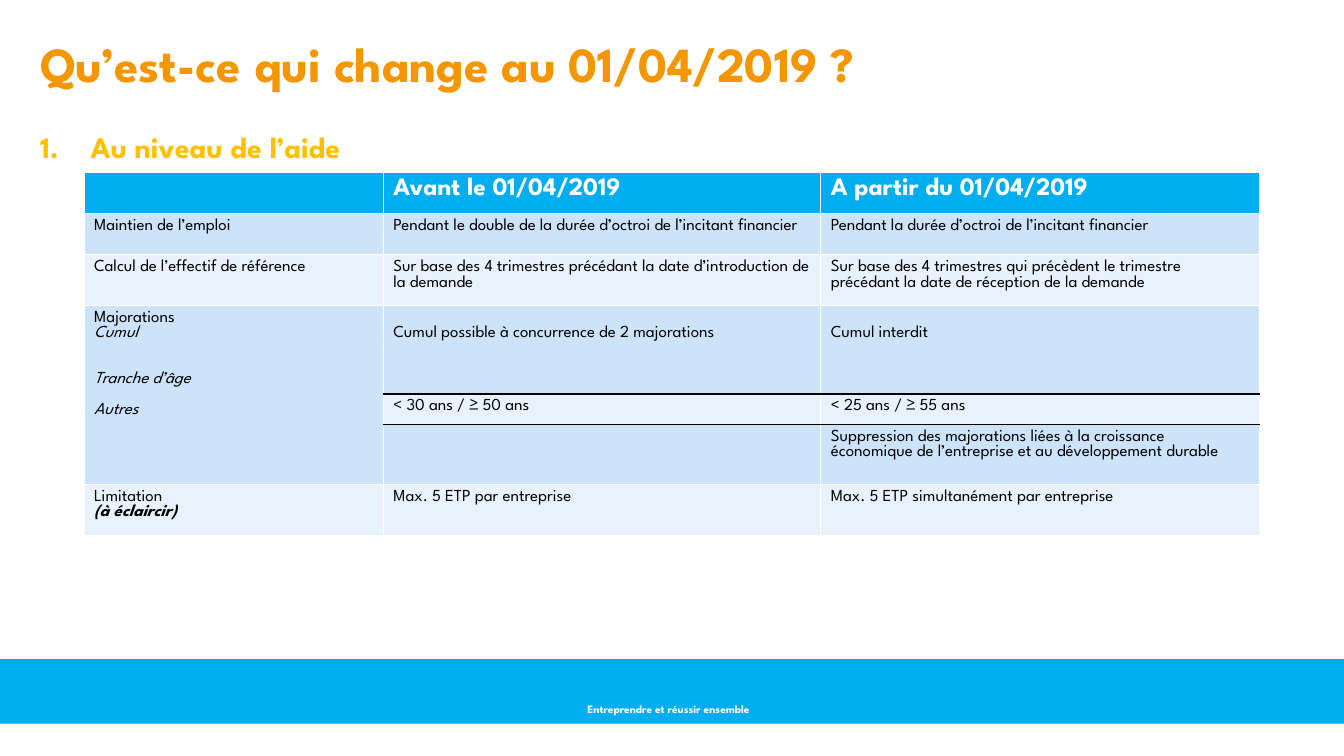
from lxml import etree
from pptx import Presentation
from pptx.dml.color import RGBColor
from pptx.enum.shapes import MSO_SHAPE
from pptx.enum.text import MSO_ANCHOR, PP_ALIGN
from pptx.oxml.ns import qn
from pptx.util import Pt

RECTANGLE = MSO_SHAPE.RECTANGLE
MIDDLE = MSO_ANCHOR.MIDDLE
CENTER = PP_ALIGN.CENTER

FONT = "League Spartan"
BLUE = RGBColor(0x00, 0xAE, 0xEF)
ORANGE = RGBColor(0xF3, 0x96, 0x00)
YELLOW = RGBColor(0xFF, 0xC0, 0x00)
BAND_DARK = RGBColor(0xCC, 0xE3, 0xF9)
BAND_LIGHT = RGBColor(0xE7, 0xF2, 0xFC)
WHITE = RGBColor(0xFF, 0xFF, 0xFF)
BLACK = RGBColor(0x00, 0x00, 0x00)

LINE_HEIGHT = 11  # one line of 12 pt table text
COLUMN_WIDTHS = (213.8, 312.5, 313.2)
ROW_HEIGHTS = (29.2, 29.5, 29.5, 63.4, 20.2, 43.2, 29.5)
AGE_ROW = 4

# Each paragraph is (text, bold, italic, blank lines above)
CHANGES = [
    ["", "Avant le 01/04/2019", "A partir du 01/04/2019"],
    ["Maintien de l’emploi",
     "Pendant le double de la durée d’octroi de l’incitant financier",
     "Pendant la durée d’octroi de l’incitant financier"],
    ["Calcul de l’effectif de référence",
     "Sur base des 4 trimestres précédant la date d’introduction de la demande",
     "Sur base des 4 trimestres qui précèdent le trimestre précédant "
     "la date de réception de la demande"],
    [[("Majorations", False, False, 0), ("Cumul", False, True, 0),
      ("Tranche d’âge", False, True, 2), ("Autres", False, True, 1)],
     "Cumul possible à concurrence de 2 majorations", "Cumul interdit"],
    ["", "< 30 ans / ≥ 50 ans", "< 25 ans / ≥ 55 ans"],
    ["", "",
     "Suppression des majorations liées à la croissance économique "
     "de l’entreprise et au développement durable"],
    [[("Limitation", False, False, 0), ("(à éclaircir)", True, True, 0)],
     "Max. 5 ETP par entreprise", "Max. 5 ETP simultanément par entreprise"],
]


def style(paragraph, size, color, bold=False, italic=False):
    font = paragraph.font
    font.name, font.size = FONT, Pt(size)
    font.bold, font.italic = bold, italic
    font.color.rgb = color


def add_text_frame(slide, left, top, width, height):
    frame = slide.shapes.add_textbox(Pt(left), Pt(top), Pt(width), Pt(height)).text_frame
    frame.word_wrap = True
    return frame


def number_paragraph(paragraph, indent):
    properties = paragraph._p.get_or_add_pPr()
    properties.set("marL", str(Pt(indent)))
    properties.set("indent", str(-Pt(indent)))
    etree.SubElement(properties, qn("a:buFont"), typeface="+mj-lt")
    etree.SubElement(properties, qn("a:buAutoNum"), type="arabicPeriod")


def add_headings(slide):
    frame = add_text_frame(slide, 21.6, 12.2, 919.4, 100)
    frame.margin_top = Pt(11.8)
    title = frame.paragraphs[0]
    title.text = "Qu’est-ce qui change au 01/04/2019 ?"
    style(title, 35, ORANGE, bold=True)

    section = frame.add_paragraph()
    section.text = "Au niveau de l’aide"
    section.space_before = Pt(26)
    number_paragraph(section, 36)
    style(section, 21.3, YELLOW, bold=True)


def add_footer(slide):
    band = slide.shapes.add_shape(RECTANGLE, 0, Pt(470.9), Pt(960), Pt(46.1))
    band.shadow.inherit = False
    band.fill.solid()
    band.fill.fore_color.rgb = BLUE
    band.line.fill.background()

    frame = add_text_frame(slide, 363.6, 497.5, 228.2, 17.3)
    frame.vertical_anchor = MIDDLE
    motto = frame.paragraphs[0]
    motto.text = "Entreprendre et réussir ensemble"
    motto.alignment = CENTER
    style(motto, 8, WHITE, bold=True)


def add_black_border(cell, side):
    line = etree.Element(qn(f"a:{side}"), w=str(Pt(1)))
    fill = etree.SubElement(line, qn("a:solidFill"))
    etree.SubElement(fill, qn("a:srgbClr"), val=str(BLACK))
    cell._tc.get_or_add_tcPr().insert(0, line)


def fill_cell(cell, content, color, is_header):
    cell.fill.solid()
    cell.fill.fore_color.rgb = color
    lines = [(content, is_header, False, 0)] if isinstance(content, str) else content
    frame = cell.text_frame
    for index, (text, bold, italic, blank_lines) in enumerate(lines):
        paragraph = frame.add_paragraph() if index else frame.paragraphs[0]
        if text:
            paragraph.text = text
        if blank_lines:
            paragraph.space_before = Pt(blank_lines * LINE_HEIGHT)
        style(paragraph, 18 if is_header else 12, WHITE if is_header else BLACK, bold, italic)


def add_changes_table(slide):
    table = slide.shapes.add_table(
        len(ROW_HEIGHTS), len(COLUMN_WIDTHS), Pt(60), Pt(123.3),
        Pt(sum(COLUMN_WIDTHS)), Pt(sum(ROW_HEIGHTS))).table
    for column, width in zip(table.columns, COLUMN_WIDTHS):
        column.width = Pt(width)
    for row, height in zip(table.rows, ROW_HEIGHTS):
        row.height = Pt(height)

    for r, contents in enumerate(CHANGES):
        band = BLUE if r == 0 else BAND_DARK if r % 2 else BAND_LIGHT
        for c, content in enumerate(contents):
            fill_cell(table.cell(r, c), content, band, r == 0)

    # The bonus rows share one label cell
    table.cell(AGE_ROW - 1, 0).merge(table.cell(AGE_ROW + 1, 0))
    for c in (1, 2):
        # Align the first bonus row with the "Cumul" label
        table.cell(AGE_ROW - 1, c).margin_top = Pt(3.6 + LINE_HEIGHT)
        # Black rules above and below the age row
        add_black_border(table.cell(AGE_ROW - 1, c), "lnB")
        add_black_border(table.cell(AGE_ROW, c), "lnB")
        add_black_border(table.cell(AGE_ROW, c), "lnT")
        add_black_border(table.cell(AGE_ROW + 1, c), "lnT")


def main():
    presentation = Presentation()
    presentation.slide_width, presentation.slide_height = Pt(960), Pt(540)
    slide = presentation.slides.add_slide(presentation.slide_layouts[6])
    add_footer(slide)
    add_headings(slide)
    add_changes_table(slide)
    presentation.save("out.pptx")


if __name__ == "__main__":
    main()
